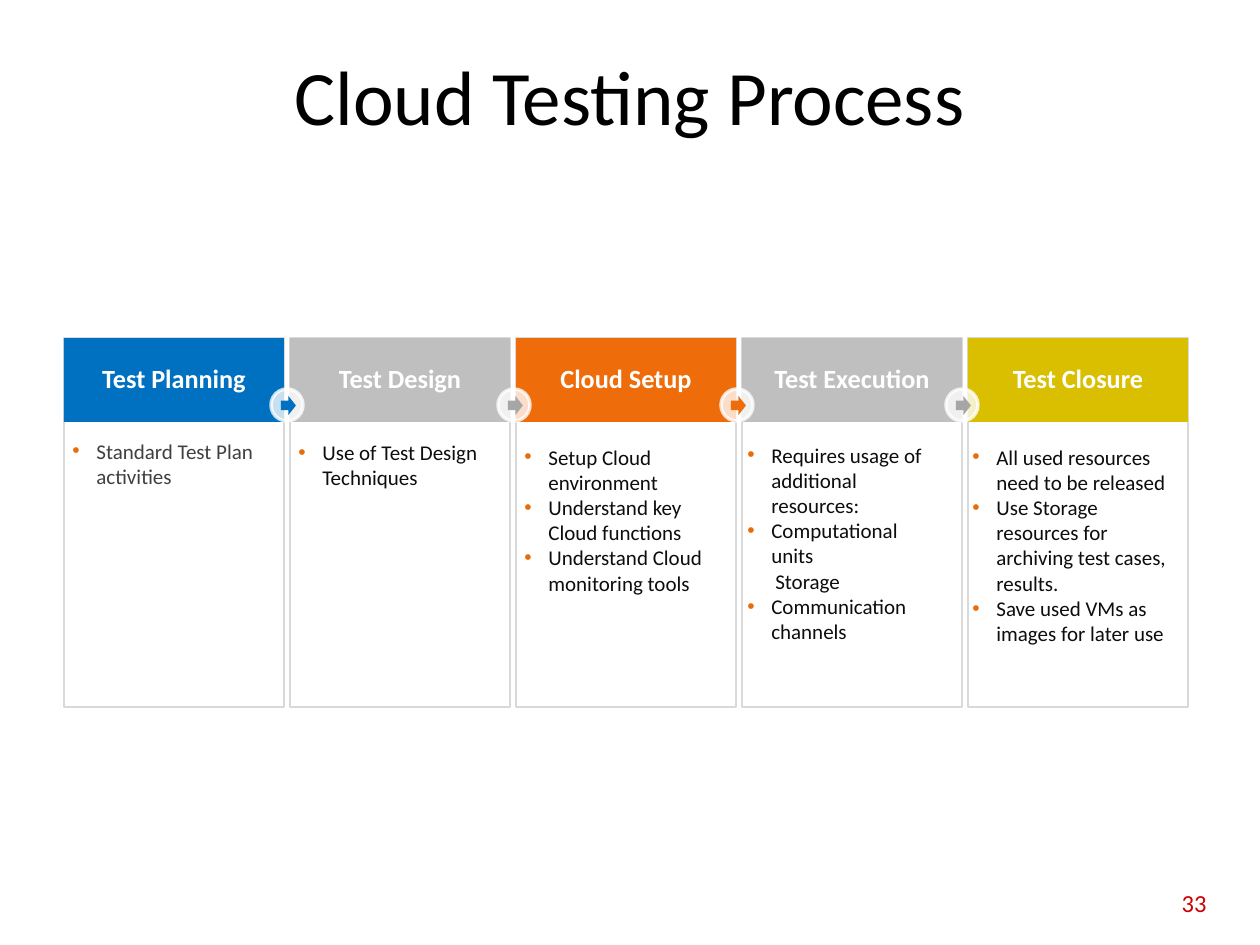
import pptx
import pptx.util
from lxml import etree
from pptx.dml.color import RGBColor
from pptx.enum.shapes import MSO_SHAPE
from pptx.enum.text import MSO_ANCHOR, PP_ALIGN
from pptx.oxml.ns import qn

SCALE = 914400 // 126
FONT = "Calibri"
WHITE = RGBColor(0xFF, 0xFF, 0xFF)
BLACK = RGBColor(0, 0, 0)
RED = RGBColor(0xCC, 0, 0)
EDGE = RGBColor(0xD9, 0xD9, 0xD9)
BLUE = RGBColor(0, 0x70, 0xC0)
SILVER = RGBColor(0xBF, 0xBF, 0xBF)
GRAY = RGBColor(0xA6, 0xA6, 0xA6)
ORANGE = RGBColor(0xEE, 0x6C, 0x0A)
GOLD = RGBColor(0xDA, 0xBE, 0)
DARK = RGBColor(0x40, 0x40, 0x40)
INK = RGBColor(0x0D, 0x0D, 0x0D)
BULLET = RGBColor(0xE8, 0x6C, 0x0A)

LEFT, TOP, PITCH, WIDE = 64, 338, 226, 220
HEAD, CARD, INDENT = 84, 369, 24

# heading, fill, text colour, list box (left, top, width, height), items
STEPS = [
    ("Test Planning", BLUE, DARK, (60, 432, 218, 140),
     ["Standard Test Plan activities"]),
    ("Test Design", SILVER, INK, (286, 433, 224, 63),
     ["Use of Test Design Techniques"]),
    ("Cloud Setup", ORANGE, INK, (512, 438, 224, 165),
     ["Setup Cloud environment", "Understand key Cloud functions",
      "Understand Cloud monitoring tools"]),
    ("Test Execution", SILVER, INK, (735, 436, 217, 217),
     ["Requires usage of additional resources:", "Computational units",
      "Storage", "Communication channels"]),
    ("Test Closure", GOLD, INK, (960, 438, 223, 267),
     ["All used resources need to be released",
      "Use Storage resources for archiving test cases, results.",
      "Save used VMs as images for later use"]),
]
PLAIN = {"Storage"}
LINKS = [(271, BLUE), (498, GRAY), (721, ORANGE), (946, GRAY)]


def px(num):
    return num * SCALE


def style(para, size, color, bold=False, align=PP_ALIGN.LEFT):
    para.alignment = align
    font = para.font
    font.name, font.size, font.bold = FONT, pptx.util.Pt(size), bold
    font.color.rgb = color


def add_form(slide, kind, box, fill, line=None, width=0.75):
    form = slide.shapes.add_shape(kind, *map(px, box))
    form.shadow.inherit = False
    form.fill.solid()
    form.fill.fore_color.rgb = fill
    if line is None:
        form.line.fill.background()
    else:
        form.line.color.rgb = line
        form.line.width = pptx.util.Pt(width)
    return form


def add_text(slide, box):
    frame = slide.shapes.add_textbox(*map(px, box)).text_frame
    frame.word_wrap = True
    return frame


def add_head(slide, box, text, fill):
    frame = add_form(slide, MSO_SHAPE.RECTANGLE, box, fill).text_frame
    frame.vertical_anchor = MSO_ANCHOR.MIDDLE
    frame.text = text
    para = frame.paragraphs[0]
    para.line_spacing = 0.9
    style(para, 15, WHITE, True, PP_ALIGN.CENTER)


def add_bullet(para):
    props = para._p.get_or_add_pPr()
    props.set("marL", str(px(INDENT)))
    props.set("indent", str(-px(INDENT)))
    tint = etree.SubElement(props, qn("a:buClr"))
    etree.SubElement(tint, qn("a:srgbClr"), val=str(BULLET))
    etree.SubElement(props, qn("a:buFont"), typeface="Arial")
    etree.SubElement(props, qn("a:buChar"), char="•")


def add_list(slide, box, items, color):
    frame = add_text(slide, box)
    frame.text = "\n".join(items)
    for para in frame.paragraphs:
        if para.text in PLAIN:
            para._p.get_or_add_pPr().set("marL", str(px(INDENT + 4)))
        else:
            add_bullet(para)
        style(para, 12, color)


def add_link(slide, left, color):
    """Draw a see-through disc with an arrow to the next step."""
    disc = add_form(slide, MSO_SHAPE.OVAL, (left, 389, 32, 32),
                    WHITE, WHITE, 2)
    for tint in disc._element.spPr.iter(qn("a:srgbClr")):
        etree.SubElement(tint, qn("a:alpha"), val="78000")
    add_form(slide, MSO_SHAPE.RIGHT_ARROW, (left + 10, 396, 15, 19), color)


def set_title(slide, text):
    title = slide.shapes.title
    title.left, title.top, title.width, title.height = map(
        px, (63, 38, 1134, 158))
    frame = title.text_frame
    frame.vertical_anchor = MSO_ANCHOR.TOP
    frame.margin_top = px(10)
    frame.text = text
    style(frame.paragraphs[0], 44, BLACK, align=PP_ALIGN.CENTER)


def main():
    deck = pptx.Presentation()
    deck.slide_width, deck.slide_height = px(1260), px(945)
    slide = deck.slides.add_slide(deck.slide_layouts[5])
    set_title(slide, "Cloud Testing Process")

    for col, (head, fill, color, box, items) in enumerate(STEPS):
        left = LEFT + col * PITCH
        add_form(slide, MSO_SHAPE.RECTANGLE, (left, TOP, WIDE, CARD),
                 WHITE, EDGE)
        add_head(slide, (left, TOP, WIDE, HEAD), head, fill)
        add_list(slide, box, items, color)
    for left, color in LINKS:
        add_link(slide, left, color)

    frame = add_text(slide, (820, 882, 399, 50))
    frame.text = "33"
    style(frame.paragraphs[0], 14, RED, align=PP_ALIGN.RIGHT)
    deck.save("out.pptx")


if __name__ == "__main__":
    main()
